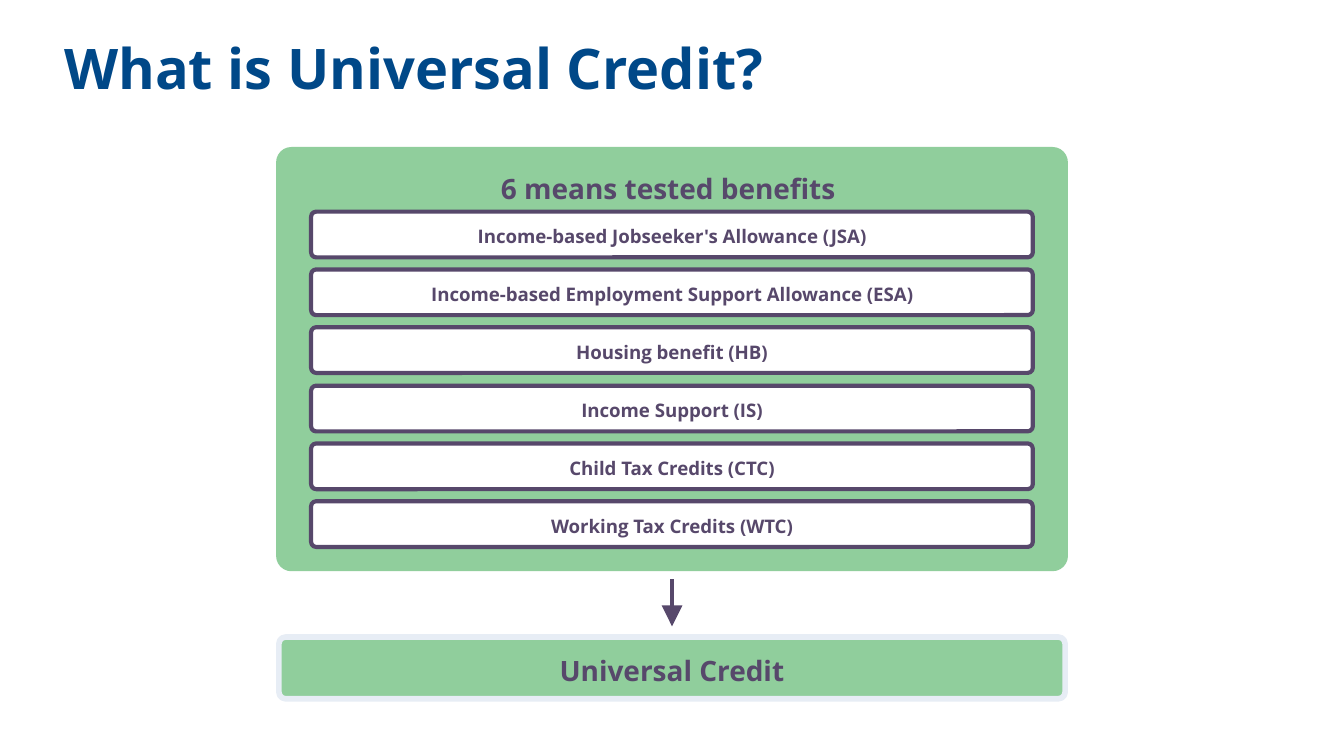
from lxml import etree
from pptx import Presentation
from pptx import util as u
from pptx.dml.color import RGBColor
from pptx.enum import shapes, text
from pptx.oxml.ns import qn

THEME = {
    "font": "Open Sans",
    "title": "004888", "ink": "57486B", "green": "90CE9C",
    "pale": "E7EDF5", "white": "FFFFFF",
    "title_pt": 30, "heading_pt": 15, "row_pt": 10,
    "edge_pt": 3, "stroke_pt": 2.25,
}
PX = 4572


def put_text(sp, words, size, color, anchor):
    tf = sp.text_frame
    tf.word_wrap = True
    tf.vertical_anchor = anchor
    tf.margin_left = tf.margin_right = tf.margin_top = tf.margin_bottom = 20 * PX
    p = tf.paragraphs[0]
    p.text = words
    p.font.name = THEME["font"]
    p.font.size = u.Pt(THEME[size])
    p.font.bold = True
    p.font.color.rgb = RGBColor.from_string(THEME[color])
    return p


def add_box(box, radius, fill, line, weight, words, size, anchor=text.MSO_ANCHOR.MIDDLE):
    sp = s.shapes.add_shape(shapes.MSO_SHAPE.ROUNDED_RECTANGLE, *[v * PX for v in box])
    sp.adjustments[0] = radius
    sp.shadow.inherit = False
    sp.fill.solid()
    sp.fill.fore_color.rgb = RGBColor.from_string(THEME[fill])
    sp.line.color.rgb = RGBColor.from_string(THEME[line])
    sp.line.width = u.Pt(THEME[weight])
    p = put_text(sp, words, size, "ink", anchor)
    p.alignment = text.PP_ALIGN.CENTER
    p.line_spacing = 1.15


prs = Presentation()
prs.slide_width = 2000 * PX
prs.slide_height = 1125 * PX
s = prs.slides.add_slide(prs.slide_layouts[6])

title = s.shapes.add_textbox(76 * PX, 30 * PX, 1358 * PX, 150 * PX)
put_text(title, "What is Universal Credit?", "title_pt", "title", text.MSO_ANCHOR.TOP)

add_box((415, 223, 1170, 623), 0.03, "green", "green", "edge_pt",
        "6 means tested benefits ", "heading_pt", text.MSO_ANCHOR.TOP)

benefits = [
    "Income-based Jobseeker's Allowance (JSA)",
    "Income-based Employment Support Allowance (ESA)",
    "Housing benefit (HB)",
    "Income Support (IS)",
    "Child Tax Credits (CTC)",
    "Working Tax Credits (WTC)",
]
first_top, last_top = 315, 746
for i, benefit in enumerate(benefits):
    top = round(first_top + i * (last_top - first_top) / (len(benefits) - 1))
    add_box((463, top, 1074, 68), 0.11, "white", "ink", "stroke_pt", benefit, "row_pt")

arrow = s.shapes.add_connector(shapes.MSO_CONNECTOR.STRAIGHT,
                               1000 * PX, 862 * PX, 1000 * PX, 932 * PX)
arrow.line.color.rgb = RGBColor.from_string(THEME["ink"])
arrow.line.width = u.Pt(THEME["stroke_pt"])
etree.SubElement(arrow.line._get_or_add_ln(), qn("a:tailEnd"),
                 type="triangle", w="lg", len="lg")
etree.SubElement(arrow._element.spPr, qn("a:effectLst"))

add_box((415, 948, 1170, 92), 0.11, "green", "pale", "edge_pt",
        "Universal Credit", "heading_pt")

prs.save("out.pptx")
